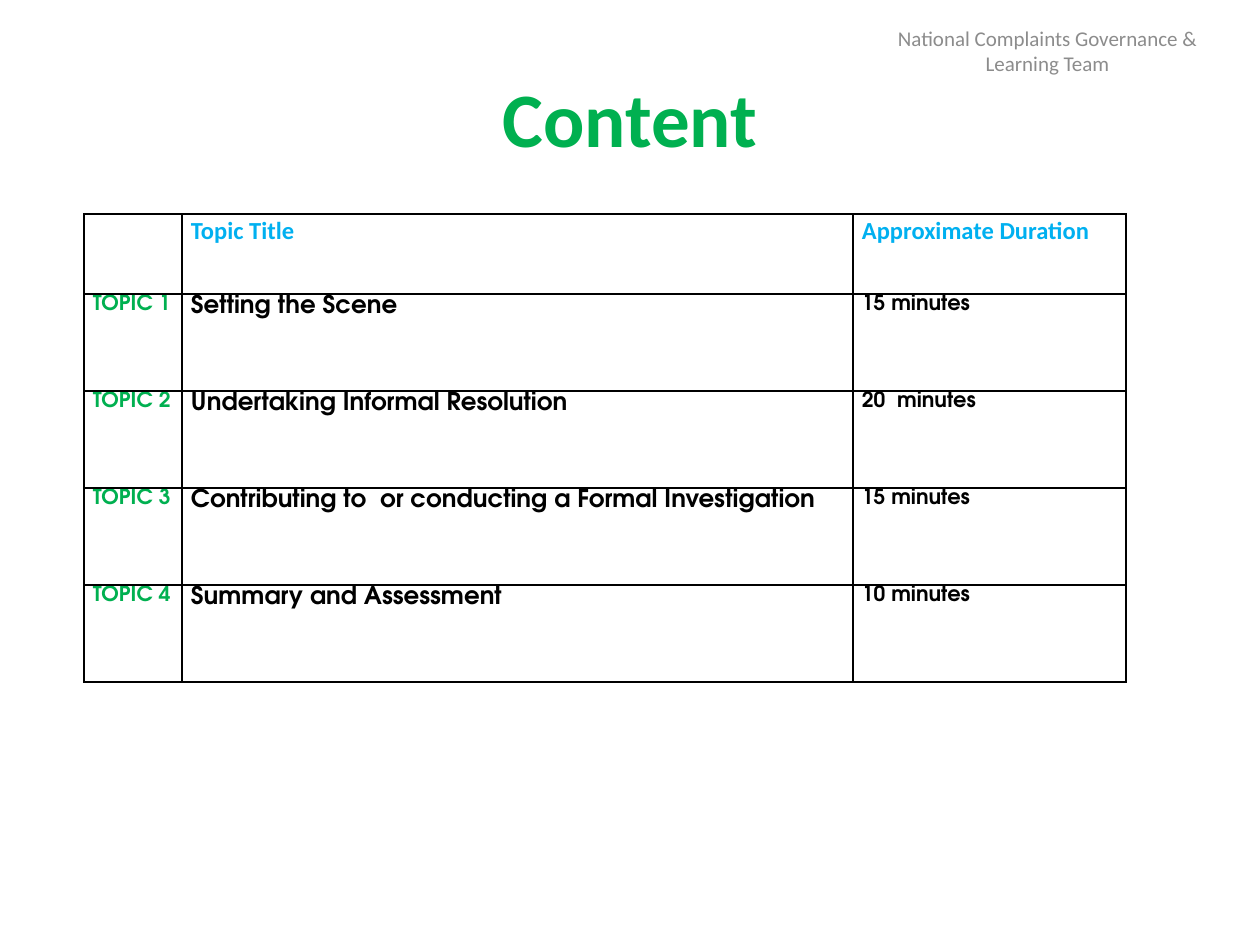
from lxml.etree import SubElement
from pptx import Presentation
from pptx.dml.color import RGBColor
from pptx.enum.text import MSO_ANCHOR as Anchor, PP_ALIGN as Align
from pptx.oxml.ns import qn
from pptx.util import Emu, Pt

GREEN = RGBColor(0x00, 0xB0, 0x50)
BLUE = RGBColor(0x00, 0xB0, 0xF0)
GREY = RGBColor(0x8C, 0x8C, 0x8C)
BLACK = RGBColor(0, 0, 0)

HEADING_FONT = "Calibri"
TOPIC_FONT = "TeX Gyre Adventor"

COLUMN_WIDTHS = [98, 671, 273]
HEADER_HEIGHT, TOPIC_HEIGHT = 80, 97
CELL_INSET = 9

HEADERS = ["", "Topic Title", "Approximate Duration"]
TOPICS = [
    ("Setting the Scene", "15 minutes"),
    ("Undertaking Informal Resolution", "20  minutes"),
    ("Contributing to  or conducting a Formal Investigation", "15 minutes"),
    ("Summary and Assessment", "10 minutes"),
]
# Size and colour of each column in the topic rows
TOPIC_STYLES = [(12, GREEN), (14, BLACK), (12, BLACK)]


def px(length):
    return Emu(round(length * 914400 / 126))


def add_run(paragraph, text, font, size, color, bold):
    run = paragraph.add_run()
    run.text = text
    run.font.name = font
    run.font.size = Pt(size)
    run.font.bold = bold
    run.font.color.rgb = color


def add_label(slide, box, text, size, color, bold=False):
    shape = slide.shapes.add_textbox(*map(px, box))
    frame = shape.text_frame
    frame.word_wrap = True
    frame.vertical_anchor = Anchor.MIDDLE
    paragraph = frame.paragraphs[0]
    paragraph.alignment = Align.CENTER
    add_run(paragraph, text, HEADING_FONT, size, color, bold)


def add_borders(cell):
    properties = cell._tc.get_or_add_tcPr()
    for side in ("a:lnL", "a:lnR", "a:lnT", "a:lnB"):
        line = SubElement(properties, qn(side), w=str(Pt(1)))
        fill = SubElement(line, qn("a:solidFill"))
        SubElement(fill, qn("a:srgbClr"), val=str(BLACK))


def fill_cell(cell, text, font, size, color):
    add_borders(cell)
    cell.fill.background()
    cell.margin_left = cell.margin_right = px(CELL_INSET)
    cell.margin_top = cell.margin_bottom = 0
    if text:
        paragraph = cell.text_frame.paragraphs[0]
        paragraph.line_spacing = 1.07
        paragraph.space_after = Pt(8)
        add_run(paragraph, text, font, size, color, True)


def add_topic_table(slide, left, top):
    heights = [HEADER_HEIGHT] + [TOPIC_HEIGHT] * len(TOPICS)
    table = slide.shapes.add_table(
        len(heights), len(COLUMN_WIDTHS), px(left), px(top),
        px(sum(COLUMN_WIDTHS)), px(sum(heights))).table
    table.first_row = table.horz_banding = False
    for column, width in zip(table.columns, COLUMN_WIDTHS):
        column.width = px(width)
    for row, height in zip(table.rows, heights):
        row.height = px(height)

    # Header row
    for column, text in enumerate(HEADERS):
        fill_cell(table.cell(0, column), text, HEADING_FONT, 14, BLUE)

    # One row per topic
    for number, topic in enumerate(TOPICS, 1):
        texts = (f"TOPIC {number}", *topic)
        for column, (text, style) in enumerate(zip(texts, TOPIC_STYLES)):
            fill_cell(table.cell(number, column), text, TOPIC_FONT, *style)


def main():
    presentation = Presentation()
    presentation.slide_width = px(1260)
    presentation.slide_height = px(945)
    slide = presentation.slides.add_slide(presentation.slide_layouts[6])

    # Title and team name
    add_label(slide, (63, 38, 1134, 158), "Content", 44, GREEN, bold=True)
    add_label(slide, (848, 26, 399, 50),
              "National Complaints Governance & Learning Team", 12, GREY)

    # Topics with durations
    add_topic_table(slide, 84, 214)

    presentation.save("out.pptx")


if __name__ == "__main__":
    main()
